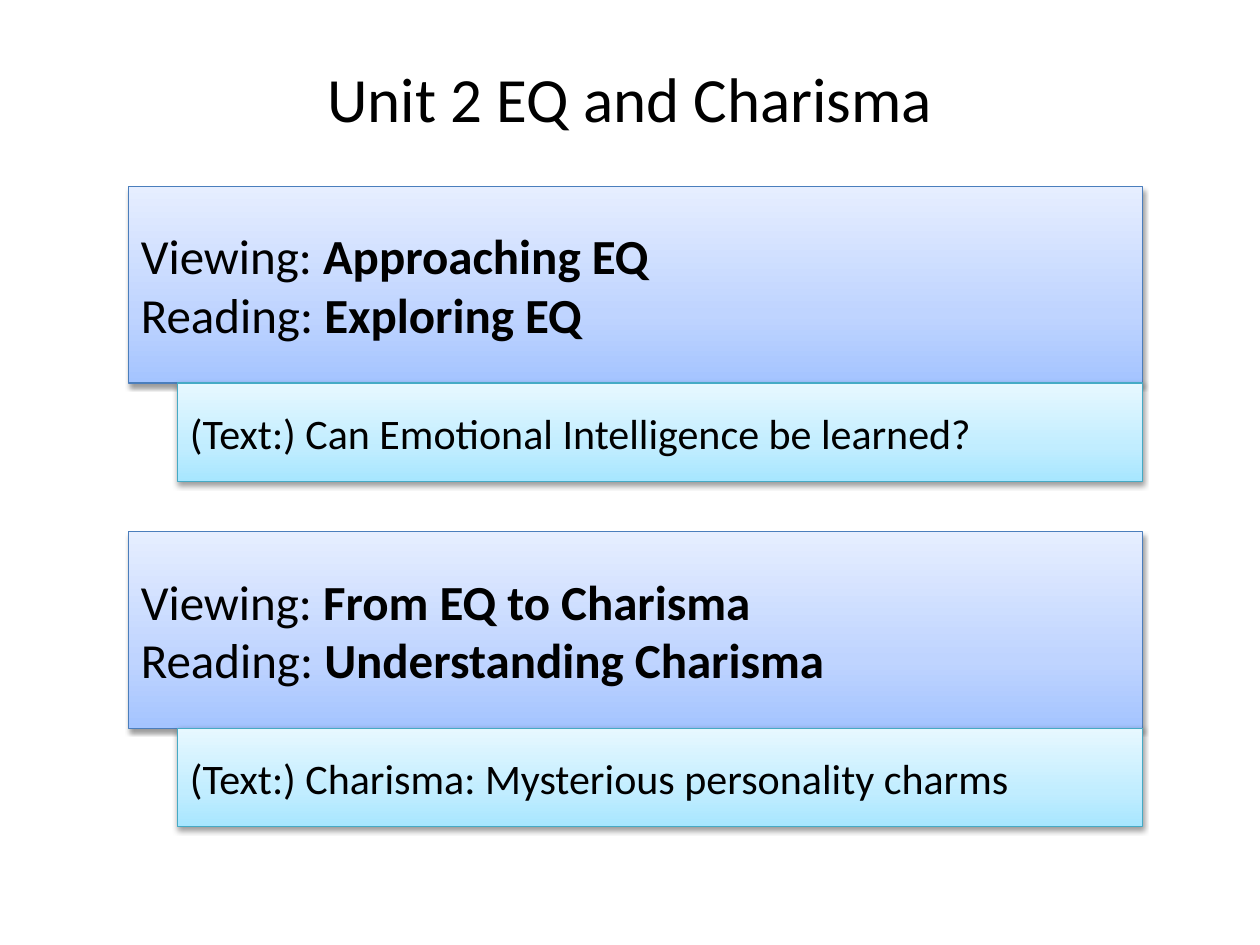
"""Build the unit overview slide with two sections of viewing, reading and text."""
from copy import deepcopy
from dataclasses import dataclass

from lxml.etree import SubElement
from pptx import Presentation
from pptx.dml.color import RGBColor
from pptx.enum.shapes import MSO_SHAPE as Preset
from pptx.enum.text import MSO_ANCHOR as Anchor, PP_ALIGN as Align
from pptx.oxml.ns import qn
from pptx.util import Inches, Pt

BLACK = RGBColor(0x00, 0x00, 0x00)
STOP_POSITIONS = (0, 0.35, 1)
RIGHT_EDGE = 9.07
FIRST_TOP = 1.48
SECTION_STEP = 2.74


@dataclass(frozen=True)
class BoxStyle:
    left: float
    height: float
    size: int
    gradient: tuple[RGBColor, RGBColor, RGBColor]
    line: RGBColor


@dataclass(frozen=True)
class Section:
    viewing: str
    reading: str
    text: str


HEADING = BoxStyle(
    1.02, 1.56, 28,
    (RGBColor(0xA4, 0xC4, 0xFF), RGBColor(0xBF, 0xD4, 0xFF), RGBColor(0xE6, 0xEE, 0xFF)),
    RGBColor(0x4B, 0x7E, 0xBC),
)
DETAIL = BoxStyle(
    1.41, 0.78, 24,
    (RGBColor(0xA7, 0xE6, 0xFF), RGBColor(0xC1, 0xED, 0xFF), RGBColor(0xE7, 0xF8, 0xFF)),
    RGBColor(0x46, 0xAA, 0xC5),
)
SECTIONS = (
    Section("Approaching EQ", "Exploring EQ", "Can Emotional Intelligence be learned?"),
    Section("From EQ to Charisma", "Understanding Charisma",
            "Charisma: Mysterious personality charms"),
)


def add_text(paragraph, text: str, *, size: int, bold: bool = False, align=Align.LEFT) -> None:
    """Append a formatted run to a paragraph."""
    paragraph.alignment = align
    run = paragraph.add_run()
    run.text = text
    run.font.name = "Calibri"
    run.font.size = Pt(size)
    run.font.bold = bold
    run.font.color.rgb = BLACK


def fill_gradient(shape, colors: tuple[RGBColor, ...]) -> None:
    """Fill a shape with a three-stop gradient that rises from the bottom."""
    shape.fill.gradient()
    shape.fill.gradient_angle = 90
    stop_list = shape._element.spPr.find(f".//{qn('a:gsLst')}")
    stop_list.append(deepcopy(stop_list[0]))
    for stop, position, color in zip(shape.fill.gradient_stops, STOP_POSITIONS, colors):
        stop.position = position
        stop.color.rgb = color


def add_shadow(shape) -> None:
    """Give a shape a soft shadow below it."""
    shape.shadow.inherit = False
    effects = shape._element.spPr.find(qn("a:effectLst"))
    shadow = SubElement(effects, qn("a:outerShdw"), blurRad=str(Pt(3.1)),
                        dist=str(Pt(1.6)), dir="5400000", rotWithShape="0")
    color = SubElement(shadow, qn("a:srgbClr"), val=str(BLACK))
    SubElement(color, qn("a:alpha"), val="38000")


def add_box(shapes, style: BoxStyle, top: float, lines: tuple[tuple[str, str], ...]) -> None:
    """Draw a box whose lines each hold a plain and a bold part."""
    shape = shapes.add_shape(Preset.RECTANGLE, Inches(style.left), Inches(top),
                             Inches(RIGHT_EDGE - style.left), Inches(style.height))
    fill_gradient(shape, style.gradient)
    shape.line.color.rgb = style.line
    shape.line.width = Pt(0.75)
    add_shadow(shape)
    frame = shape.text_frame
    frame.word_wrap = True
    frame.vertical_anchor = Anchor.MIDDLE
    for index, (plain, bold) in enumerate(lines):
        paragraph = frame.add_paragraph() if index else frame.paragraphs[0]
        add_text(paragraph, plain, size=style.size)
        if bold:
            add_text(paragraph, bold, size=style.size, bold=True)


def add_title(slide, text: str) -> None:
    """Place and fill the slide title."""
    title = slide.shapes.title
    title.left, title.top = Inches(0.5), Inches(0.3)
    title.width, title.height = Inches(9), Inches(0.95)
    title.text_frame.vertical_anchor = Anchor.MIDDLE
    add_text(title.text_frame.paragraphs[0], text, size=36, align=Align.CENTER)


def main() -> None:
    """Create and save the presentation."""
    presentation = Presentation()
    presentation.slide_width, presentation.slide_height = Inches(10), Inches(7.5)
    slide = presentation.slides.add_slide(presentation.slide_layouts.get_by_name("Title Only"))
    add_title(slide, "Unit 2 EQ and Charisma")
    group = slide.shapes.add_group_shape()
    for index, section in enumerate(SECTIONS):
        top = FIRST_TOP + index * SECTION_STEP
        add_box(group.shapes, HEADING, top,
                (("Viewing: ", section.viewing), ("Reading: ", section.reading)))
        add_box(group.shapes, DETAIL, top + HEADING.height, ((f"(Text:) {section.text}", ""),))
    presentation.save("out.pptx")


if __name__ == "__main__":
    main()
